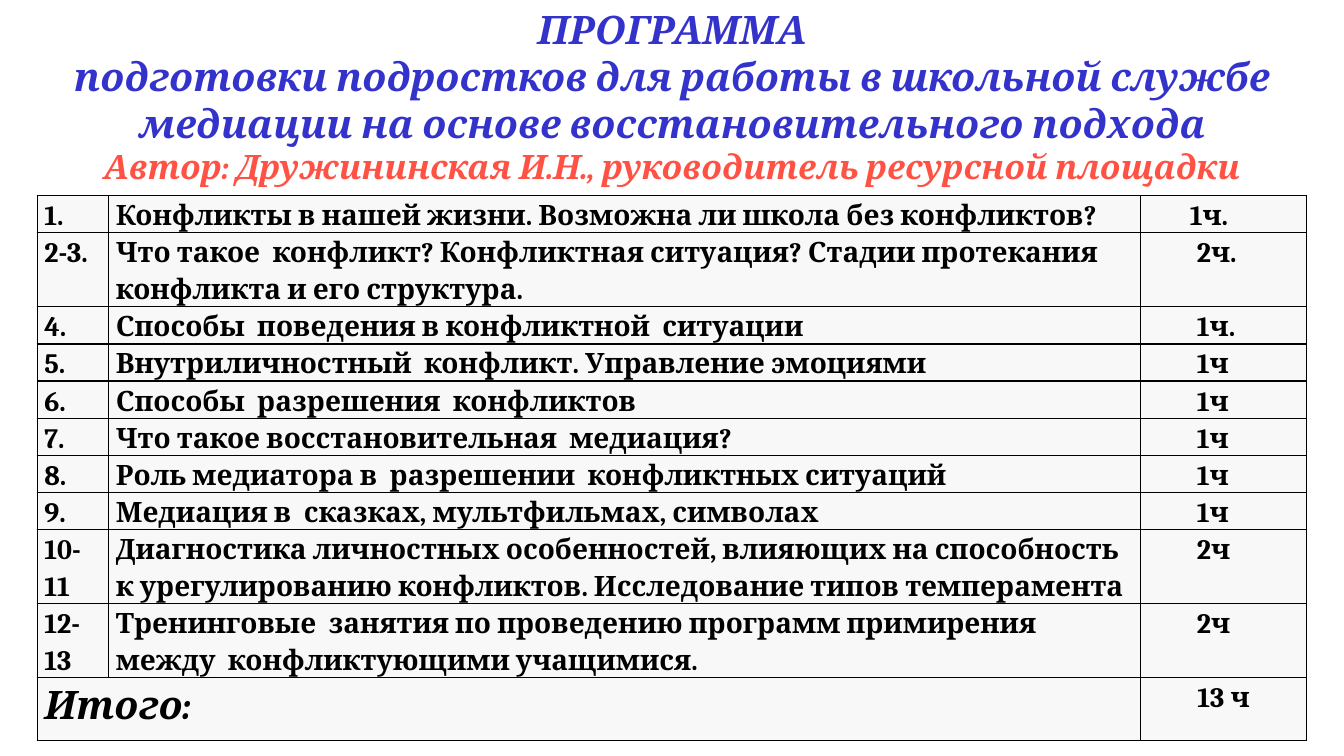
from lxml.etree import SubElement
from pptx import Presentation
from pptx.dml.color import RGBColor
from pptx.enum.text import MSO_AUTO_SIZE, PP_ALIGN
from pptx.oxml import parse_xml
from pptx.oxml.ns import nsdecls, qn
from pptx.util import Inches, Pt

# Content
TITLE = [
    ("ПРОГРАММА", "heading"),
    ("подготовки подростков для работы в школьной службе медиации "
     "на основе восстановительного подхода", "heading"),
    ("Автор: Дружининская И.Н., руководитель ресурсной площадки", "author"),
]
LESSONS = [
    ("1.", "Конфликты в нашей жизни. Возможна ли школа без конфликтов?", "1ч."),
    ("2-3.", "Что такое  конфликт? Конфликтная ситуация? Стадии протекания "
             "конфликта и его структура.", "2ч."),
    ("4.", "Способы  поведения в конфликтной  ситуации", "1ч."),
    ("5.", "Внутриличностный  конфликт. Управление эмоциями", "1ч"),
    ("6.", "Способы  разрешения  конфликтов", "1ч"),
    ("7.", "Что такое восстановительная  медиация?", "1ч"),
    ("8.", "Роль медиатора в  разрешении  конфликтных ситуаций", "1ч"),
    ("9.", "Медиация в  сказках, мультфильмах, символах", "1ч"),
    ("10-11", "Диагностика личностных особенностей, влияющих на способность "
              "к урегулированию конфликтов. Исследование типов темперамента", "2ч"),
    ("12-13", "Тренинговые  занятия по проведению программ примирения "
              "между  конфликтующими учащимися.", "2ч"),
]
TOTAL = ("Итого:", "", "13 ч")

# Format values
BLUE = RGBColor(0x33, 0x33, 0xCC)
RED = RGBColor(0xFF, 0x52, 0x44)
BLACK = RGBColor(0, 0, 0)
CELL_GREY = RGBColor(0xF2, 0xF2, 0xF2)
CELL_OPACITY = "52000"
FONTS = {
    "heading": {"size": Pt(28), "italic": True, "color": BLUE},
    "author": {"size": Pt(24), "italic": True, "color": RED},
    "cell": {"size": Pt(20), "italic": False, "color": BLACK},
    "total": {"size": Pt(28), "italic": True, "color": BLACK},
}
CELL_MARGINS = {"margin_left": Inches(0.07), "margin_right": Inches(0.07),
                "margin_top": 0, "margin_bottom": 0}
CELL_PARAGRAPH = {"line_spacing": 1.15, "space_after": Pt(10)}

# Layout in inches
SLIDE_WIDTH, SLIDE_HEIGHT = 13.34, 7.5
TABLE_LEFT, TABLE_TOP = 0.37, 1.94
COLUMN_WIDTHS = [0.71, 10.24, 1.65]
ONE_LINE, TWO_LINES, TOTAL_ROW = 0.35, 0.73, 0.62
HOURS_INDENT, FIRST_HOURS_INDENT = 0.49, 0.42


def set_all(target, values):
    for name, value in values.items():
        setattr(target, name, value)


def write(para, text, style):
    span = para.add_run()
    span.text = text
    values = dict(FONTS[style])
    span.font.color.rgb = values.pop("color")
    set_all(span.font, {"name": "Cambria", "bold": True, **values})


def style_cell(cell):
    set_all(cell, CELL_MARGINS)
    cell.fill.solid()
    cell.fill.fore_color.rgb = CELL_GREY
    properties = cell._tc.get_or_add_tcPr()
    grey = properties.find(qn("a:solidFill")).find(qn("a:srgbClr"))
    SubElement(grey, qn("a:alpha")).set("val", CELL_OPACITY)
    for position, side in enumerate("LRTB"):
        properties.insert(position, parse_xml(
            f'<a:ln{side} {nsdecls("a")} w="{Pt(1)}"><a:solidFill>'
            f'<a:srgbClr val="{BLACK}"/></a:solidFill></a:ln{side}>'))


deck = Presentation()
deck.slide_width, deck.slide_height = Inches(SLIDE_WIDTH), Inches(SLIDE_HEIGHT)
page = deck.slides.add_slide(deck.slide_layouts[6])

# Programme table
rows = LESSONS + [TOTAL]
heights = [TWO_LINES if "-" in number else ONE_LINE for number, _, _ in LESSONS]
heights.append(TOTAL_ROW)
table = page.shapes.add_table(
    len(rows), len(COLUMN_WIDTHS), Inches(TABLE_LEFT), Inches(TABLE_TOP),
    Inches(sum(COLUMN_WIDTHS)), Inches(sum(heights))).table
table.first_row = table.horz_banding = False
for column, width in zip(table.columns, COLUMN_WIDTHS):
    column.width = Inches(width)
for row, height in zip(table.rows, heights):
    row.height = Inches(height)

last = len(rows) - 1
table.cell(last, 0).merge(table.cell(last, 1))
for row_index, texts in enumerate(rows):
    for column_index, text in enumerate(texts):
        cell = table.cell(row_index, column_index)
        style_cell(cell)
        if not text:
            continue
        para = cell.text_frame.paragraphs[0]
        set_all(para, CELL_PARAGRAPH)
        write(para, text, "total" if text == TOTAL[0] else "cell")
        if column_index == 2:
            if row_index == last:
                para.alignment = PP_ALIGN.CENTER
            else:
                indent = HOURS_INDENT if row_index else FIRST_HOURS_INDENT
                cell.margin_left += Inches(indent)

# Title
box = page.shapes.add_textbox(0, 0, Inches(SLIDE_WIDTH), Inches(1.99))
frame = box.text_frame
set_all(frame, {"word_wrap": True, "auto_size": MSO_AUTO_SIZE.SHAPE_TO_FIT_TEXT})
for index, (text, style) in enumerate(TITLE):
    para = frame.add_paragraph() if index else frame.paragraphs[0]
    para.alignment = PP_ALIGN.CENTER
    write(para, text, style)

deck.save("out.pptx")
